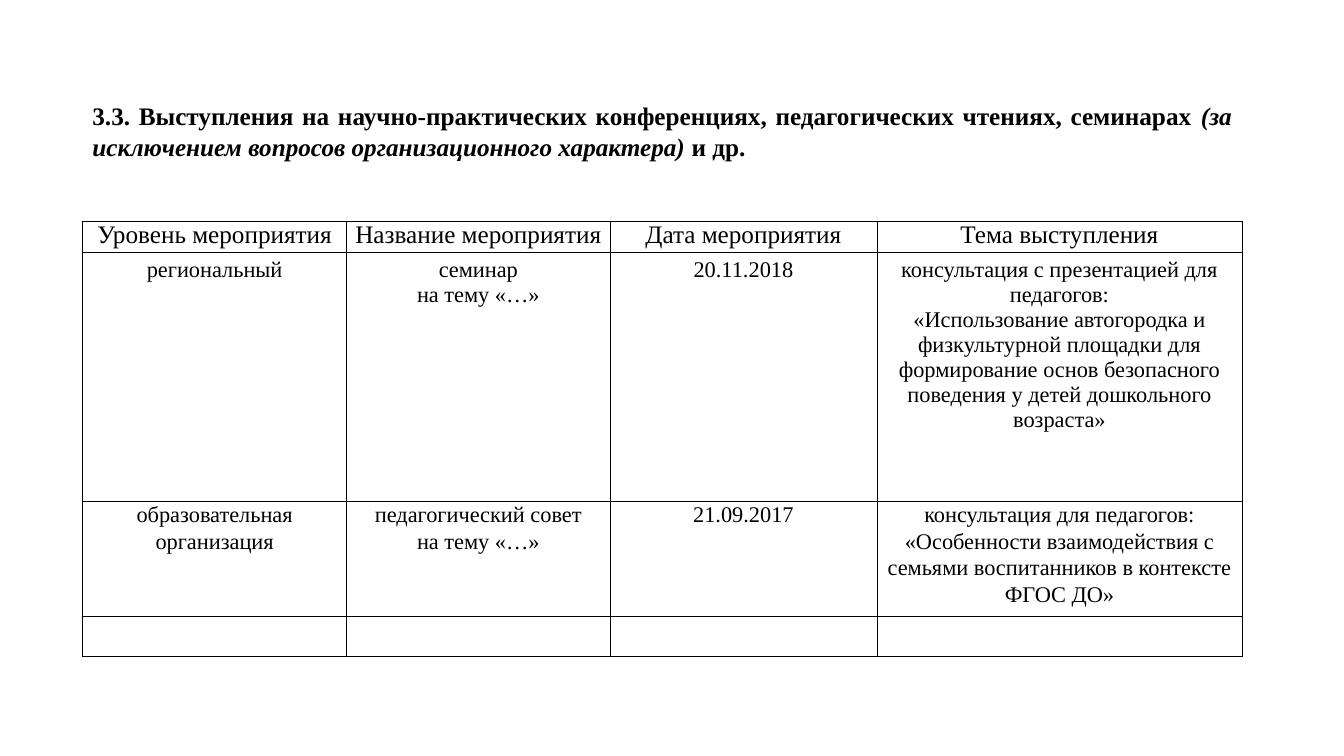
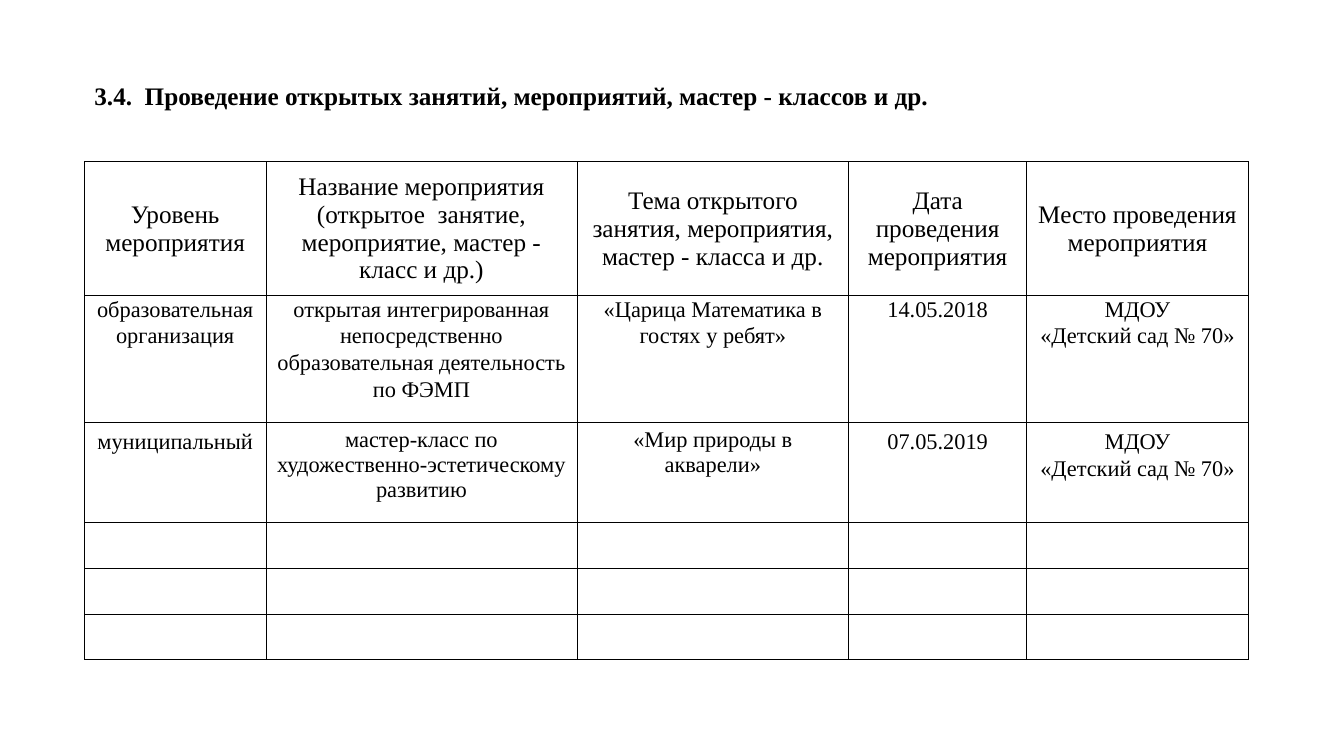
import pptx
import pptx.dml.color
import pptx.enum.text
import pptx.oxml
import pptx.oxml.ns
import pptx.util
from dataclasses import dataclass

Cm = pptx.util.Cm
Pt = pptx.util.Pt
ALIGN = pptx.enum.text.PP_ALIGN
ANCHOR = pptx.enum.text.MSO_ANCHOR


@dataclass(frozen=True)
class Theme:
    """Colours and type shared by all slides."""
    font: str = "Times New Roman"
    ink: str = "000000"
    head: int = 18
    body: int = 16
    rule: float = 0.5


THEME = Theme()

# Cell margins and anchors
LOOSE = dict(margin_left=Cm(0.25), margin_right=Cm(0.25),
             margin_top=Cm(0.13), margin_bottom=Cm(0.13))
TIGHT = dict(margin_left=Cm(0.18), margin_right=Cm(0.18),
             margin_top=0, margin_bottom=0)
MIDDLE = dict(TIGHT, vertical_anchor=ANCHOR.MIDDLE)
WIDE = 1.07  # line spacing of the airier rows


def apply(target, form):
    for name, value in form.items():
        setattr(target, name, value)


def add_run(para, text, size, **form):
    run = para.add_run()
    run.text = text
    apply(run.font, dict(name=THEME.font, size=Pt(size), **form))
    run.font.color.rgb = pptx.dml.color.RGBColor.from_string(THEME.ink)


def add_title(slide, box, parts, align):
    """Bold heading; each part is (text, italic)."""
    frame = slide.shapes.add_textbox(*map(Cm, box)).text_frame
    frame.word_wrap = True
    para = frame.paragraphs[0]
    para.alignment = align
    for text, slant in parts:
        add_run(para, text, THEME.head, bold=True, italic=slant)


def add_rules(cell):
    """Thin line on all four sides of a cell."""
    props = cell._tc.get_or_add_tcPr()
    for side in "LRTB":
        props.append(pptx.oxml.parse_xml(
            f'<a:ln{side} {pptx.oxml.ns.nsdecls("a")} w="{Pt(THEME.rule)}">'
            f'<a:solidFill><a:srgbClr val="{THEME.ink}"/></a:solidFill>'
            f'</a:ln{side}>'))


def fill_cell(cell, text, size, form, space):
    """Centred text, one paragraph a line."""
    apply(cell, form)
    add_rules(cell)
    cell.fill.background()
    frame = cell.text_frame
    for index, line in enumerate(text.split("\n") if text else []):
        para = frame.add_paragraph() if index else frame.paragraphs[0]
        apply(para, dict(alignment=ALIGN.CENTER, line_spacing=space))
        add_run(para, line, size)


def add_grid(slide, left, top, widths, rows):
    """Ruled table; each row is (height, form, spacings, texts)."""
    frame = slide.shapes.add_table(
        len(rows), len(widths), Cm(left), Cm(top),
        Cm(sum(widths)), Cm(sum(row[0] for row in rows)))
    table = frame.table
    apply(table, dict(first_row=False, horz_banding=False))
    for column, width in zip(table.columns, widths):
        column.width = Cm(width)
    for r, (height, form, spaces, texts) in enumerate(rows):
        table.rows[r].height = Cm(height)
        size = THEME.body if r else THEME.head
        for c, text in enumerate(texts):
            fill_cell(table.cell(r, c), text, size, form, spaces[c])


def blank_row(height, count):
    return height, LOOSE, [1.0] * count, [""] * count


def add_talks(slide):
    """Section 3.3: conference talks."""
    add_title(slide, (2.08, 2.41, 29.21, 1.8), [
        ("3.3. Выступления на научно-практических конференциях, "
         "педагогических чтениях, семинарах ", False),
        ("(за исключением вопросов организационного характера) ", True),
        ("и др.", False),
    ], ALIGN.JUSTIFY)
    add_grid(slide, 2.08, 5.58, [6.66, 6.63, 6.73, 9.2], [
        (0.79, TIGHT, [1.0] * 4, [
            "Уровень мероприятия", "Название мероприятия",
            "Дата мероприятия", "Тема выступления"]),
        (6.25, LOOSE, [1.0] * 4, [
            "региональный", "семинар\nна тему «…»", "20.11.2018",
            "консультация с презентацией для педагогов:\n"
            "«Использование автогородка и физкультурной площадки для "
            "формирование основ безопасного поведения у детей "
            "дошкольного возраста»"]),
        (2.9, TIGHT, [WIDE] * 4, [
            "образовательная\nорганизация",
            "педагогический совет\nна тему «…»", "21.09.2017",
            "консультация для педагогов:\n"
            "«Особенности взаимодействия с семьями воспитанников "
            "в контексте ФГОС ДО»"]),
        blank_row(1.02, 4),
    ])


def add_classes(slide):
    """Section 3.4: open lessons and workshops."""
    place = "МДОУ\n«Детский сад № 70»"
    add_title(slide, (2.13, 1.9, 29.31, 1.02), [
        ("3.4.  Проведение открытых занятий, мероприятий, "
         "мастер - классов и др.", False),
    ], ALIGN.LEFT)
    add_grid(slide, 2.13, 4.07, [4.57, 7.84, 6.85, 4.48, 5.59], [
        (3.38, MIDDLE, [1.0] * 5, [
            "Уровень мероприятия",
            "Название мероприятия (открытое  занятие, мероприятие, "
            "мастер - класс и др.)",
            "Тема открытого занятия, мероприятия, мастер - класса и др.",
            "Дата проведения мероприятия",
            "Место проведения мероприятия"]),
        (3.2, TIGHT, [WIDE] * 5, [
            "образовательная организация",
            "открытая интегрированная непосредственно образовательная "
            "деятельность по ФЭМП",
            "«Царица Математика в гостях у ребят»", "14.05.2018", place]),
        (2.52, LOOSE, [WIDE, 1.0, 1.0, WIDE, WIDE], [
            "муниципальный",
            "мастер-класс по художественно-эстетическому развитию",
            "«Мир природы в акварели»", "07.05.2019", place]),
        *[blank_row(1.15, 5)] * 3,
    ])


def main():
    deck = pptx.Presentation()
    apply(deck, dict(slide_width=Cm(33.87), slide_height=Cm(19.05)))
    for build in (add_talks, add_classes):
        build(deck.slides.add_slide(deck.slide_layouts[6]))
    deck.save("out.pptx")


if __name__ == "__main__":
    main()
